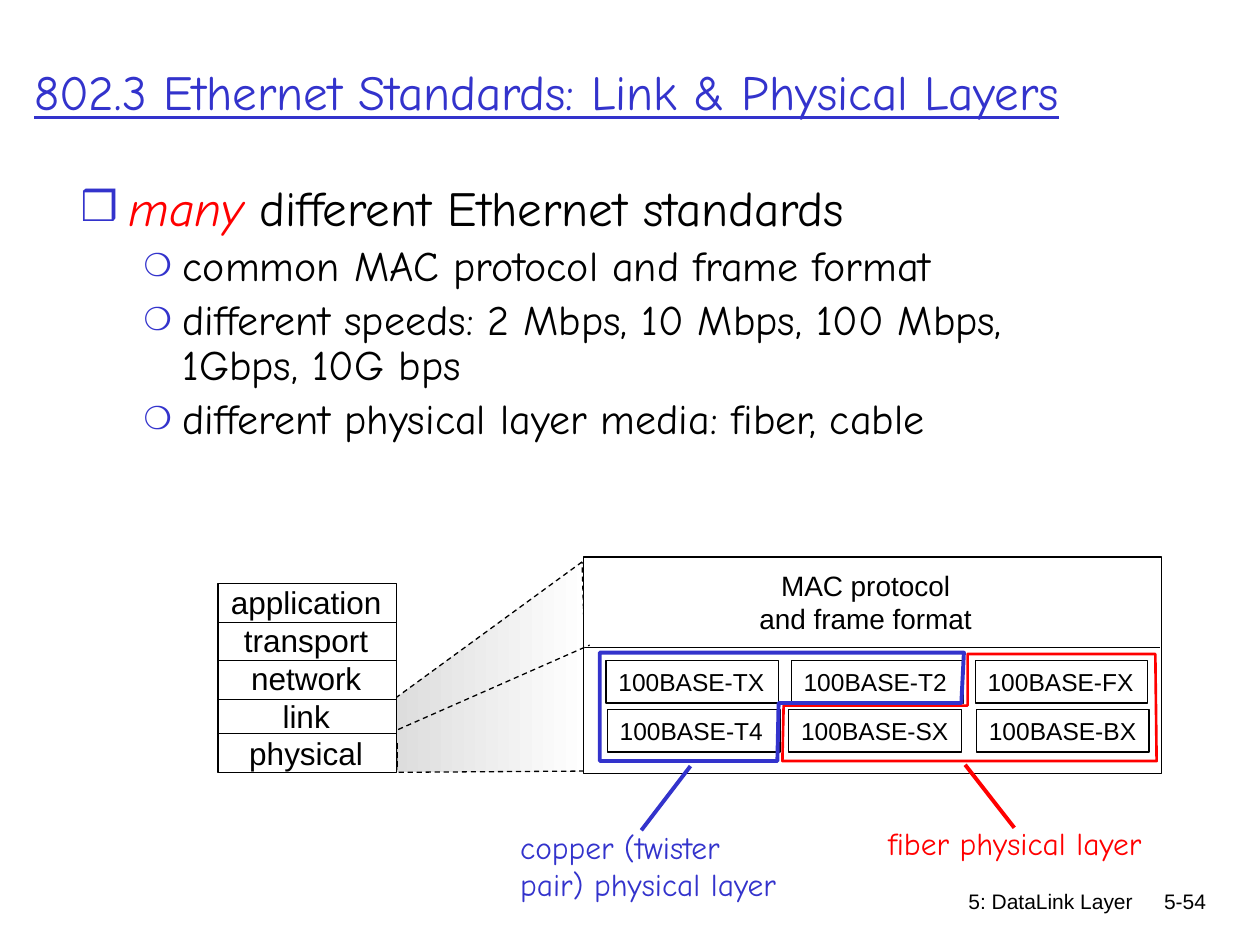
from lxml import etree
from pptx import Presentation
from pptx.dml.color import RGBColor
from pptx.enum.dml import MSO_LINE
from pptx.enum.shapes import MSO_CONNECTOR, MSO_SHAPE
from pptx.enum.text import MSO_ANCHOR, MSO_AUTO_SIZE, PP_ALIGN
from pptx.oxml.ns import qn
from pptx.util import Inches, Pt

BLACK = RGBColor(0x00, 0x00, 0x00)
WHITE = RGBColor(0xFF, 0xFF, 0xFF)
GREY = RGBColor(0xDD, 0xDD, 0xDD)
BLUE = RGBColor(0x33, 0x33, 0xCC)
RED = RGBColor(0xFF, 0x00, 0x00)
BODY_FONT, LABEL_FONT = "Comic Neue", "Arial"

TITLE = "802.3 Ethernet Standards: Link & Physical Layers"
# Each item: level, then runs of (text, format)
BULLETS = [
    (0, [("many", {"color": RED, "italic": True}), (" different Ethernet standards", {})]),
    (1, [("common MAC protocol and frame format", {})]),
    (1, [("different speeds: 2 Mbps, 10 Mbps, 100 Mbps, 1Gbps, 10G bps", {})]),
    (1, [("different physical layer media: fiber, cable", {})]),
]
LEVELS = [
    {"size": 28, "character": "❒", "scale": 85, "margin": 0.38, "hanging": 0.38},
    {"size": 24, "character": "❍", "scale": 75, "margin": 0.81, "hanging": 0.31},
]
LAYERS = ["application", "transport", "network", "link", "physical"]
LAYER_DIVIDERS = [4.94, 5.24, 5.55, 5.82]
# Each row: lefts of its boxes, top, names
STANDARDS = [
    ((4.81, 6.28, 7.74), 5.24, ["100BASE-TX", "100BASE-T2", "100BASE-FX"]),
    ((4.82, 6.26, 7.75), 5.63, ["100BASE-T4", "100BASE-SX", "100BASE-BX"]),
]
# Each group: outline points, pointer start and end, label box, label lines
MEDIA = [
    {"color": RED, "width": 1.5,
     "outline": [(7.68, 5.19), (7.68, 5.6), (6.22, 5.6), (6.21, 6.04), (9.18, 6.04), (9.17, 5.19)],
     "pointer": (7.66, 6.07, 8.05, 6.57),
     "label_box": (6.95, 6.49, 2.46, 0.4), "label": ["fiber physical layer"]},
    {"color": BLUE, "width": 2.25,
     "outline": [(7.65, 5.18), (7.63, 5.58), (6.18, 5.58), (6.17, 6.04), (4.76, 6.04), (4.76, 5.18)],
     "pointer": (5.48, 6.08, 5.09, 6.59),
     "label_box": (4.03, 6.52, 2.4, 0.7), "label": ["copper (twister", "pair) physical layer"]},
]
FOOTERS = [("5: DataLink Layer", (5.92, 7, 3.17, 0.5)), ("5-54", (8.93, 7, 0.74, 0.5))]


def inches(values):
    return [Inches(value) for value in values]


def add_run(paragraph, text, color=BLACK, **font_values):
    run = paragraph.add_run()
    run.text = text
    run.font.color.rgb = color
    for name, value in font_values.items():
        setattr(run.font, name, value)


def write_lines(shape, lines, size, align=PP_ALIGN.LEFT, wrap=False,
                name=LABEL_FONT, color=BLACK):
    frame = shape.text_frame
    frame.word_wrap = wrap
    for index, line in enumerate(lines):
        paragraph = frame.add_paragraph() if index else frame.paragraphs[0]
        paragraph.alignment = align
        add_run(paragraph, line, color, size=Pt(size), name=name)


def add_text(slide, box, lines, size, **options):
    write_lines(slide.shapes.add_textbox(*inches(box)), lines, size, **options)


def style_line(line, color=BLACK, width=0.75, dashed=False):
    line.color.rgb = color
    line.width = Pt(width)
    if dashed:
        line.dash_style = MSO_LINE.DASH


def add_line(slide, ends, **line_style):
    connector = slide.shapes.add_connector(MSO_CONNECTOR.STRAIGHT, *inches(ends))
    style_line(connector.line, **line_style)
    etree.SubElement(connector._element.spPr, qn("a:effectLst"))


def add_rectangle(slide, box, filled=True):
    rectangle = slide.shapes.add_shape(MSO_SHAPE.RECTANGLE, *inches(box))
    rectangle.shadow.inherit = False
    if filled:
        rectangle.fill.solid()
        rectangle.fill.fore_color.rgb = WHITE
    else:
        rectangle.fill.background()
    style_line(rectangle.line)
    return rectangle


def add_outline(slide, points, **line_style):
    start, *others = [inches(point) for point in points]
    builder = slide.shapes.build_freeform(*start)
    builder.add_line_segments(others, close=True)
    outline = builder.convert_to_shape()
    outline.shadow.inherit = False
    outline.fill.background()
    style_line(outline.line, **line_style)
    return outline


def set_bullet(paragraph, character, scale, margin, hanging):
    properties = paragraph._p.get_or_add_pPr()
    properties.set("marL", str(Inches(margin)))
    properties.set("indent", str(-Inches(hanging)))
    color = etree.SubElement(properties, qn("a:buClr"))
    etree.SubElement(color, qn("a:srgbClr"), val=str(BLUE))
    etree.SubElement(properties, qn("a:buSzPct"), val=str(scale * 1000))
    etree.SubElement(properties, qn("a:buChar"), char=character)


def place(placeholder, box, anchor):
    names = ("left", "top", "width", "height")
    for name, value in zip(names, inches(box)):
        setattr(placeholder, name, value)
    placeholder.text_frame.auto_size = MSO_AUTO_SIZE.NONE
    placeholder.text_frame.vertical_anchor = anchor


def fill_placeholders(slide):
    title, body = slide.placeholders
    place(title, (0.17, 0.1, 9.53, 1.25), MSO_ANCHOR.MIDDLE)
    title_paragraph = title.text_frame.paragraphs[0]
    title_paragraph.alignment = PP_ALIGN.LEFT
    add_run(title_paragraph, TITLE, BLUE, size=Pt(28), name=BODY_FONT, underline=True)

    place(body, (0.54, 1.41, 8.5, 2.3), MSO_ANCHOR.TOP)
    frame = body.text_frame
    for index, (level, runs) in enumerate(BULLETS):
        paragraph = frame.add_paragraph() if index else frame.paragraphs[0]
        bullet = dict(LEVELS[level])
        size = bullet.pop("size")
        paragraph.level = level
        paragraph.line_spacing = 0.9
        paragraph.space_before = Pt(size * 0.2)
        set_bullet(paragraph, **bullet)
        for text, values in runs:
            add_run(paragraph, text, size=Pt(size), name=BODY_FONT, **values)


def draw_layer_stack(slide):
    zoom = add_outline(slide, [(4.62, 4.46), (3.14, 5.54), (3.15, 6.13), (4.67, 6.12)], dashed=True)
    zoom.fill.gradient()
    zoom.fill.gradient_angle = 0
    for stop, color in zip(zoom.fill.gradient_stops, (GREY, WHITE)):
        stop.color.rgb = color
    add_rectangle(slide, (1.73, 4.63, 1.42, 1.5))
    add_text(slide, (1.73, 4.58, 1.4, 1.6), LAYERS, 18, align=PP_ALIGN.CENTER)
    for top in LAYER_DIVIDERS:
        add_line(slide, (1.73, top, 3.15, top))
    for left in (1.73, 3.15):
        add_line(slide, (left, 5.9, left, 6.09), dashed=True)


def draw_link_detail(slide):
    add_rectangle(slide, (4.63, 4.42, 4.59, 1.72))
    add_line(slide, (4.64, 5.14, 9.21, 5.14))
    add_text(slide, (5.92, 4.46, 1.9, 0.64), ["MAC protocol", "and frame format"], 16,
             align=PP_ALIGN.CENTER)
    add_line(slide, (3.16, 5.79, 4.68, 5.12), dashed=True)
    for lefts, top, names in STANDARDS:
        for left, name in zip(lefts, names):
            box = add_rectangle(slide, (left, top, 1.37, 0.34), filled=False)
            write_lines(box, [name], 14)


def draw_media(slide):
    for group in MEDIA:
        color = group["color"]
        add_outline(slide, group["outline"], color=color, width=group["width"])
        add_line(slide, group["pointer"], color=color, width=2.25)
        add_text(slide, group["label_box"], group["label"], 18, name=BODY_FONT, color=color)


def main():
    presentation = Presentation()
    presentation.slide_width, presentation.slide_height = inches((10, 7.5))
    slide = presentation.slides.add_slide(presentation.slide_layouts[1])
    fill_placeholders(slide)
    draw_layer_stack(slide)
    draw_link_detail(slide)
    draw_media(slide)
    for text, box in FOOTERS:
        add_text(slide, box, [text], 12, align=PP_ALIGN.RIGHT, wrap=True)
    presentation.save("out.pptx")


if __name__ == "__main__":
    main()
